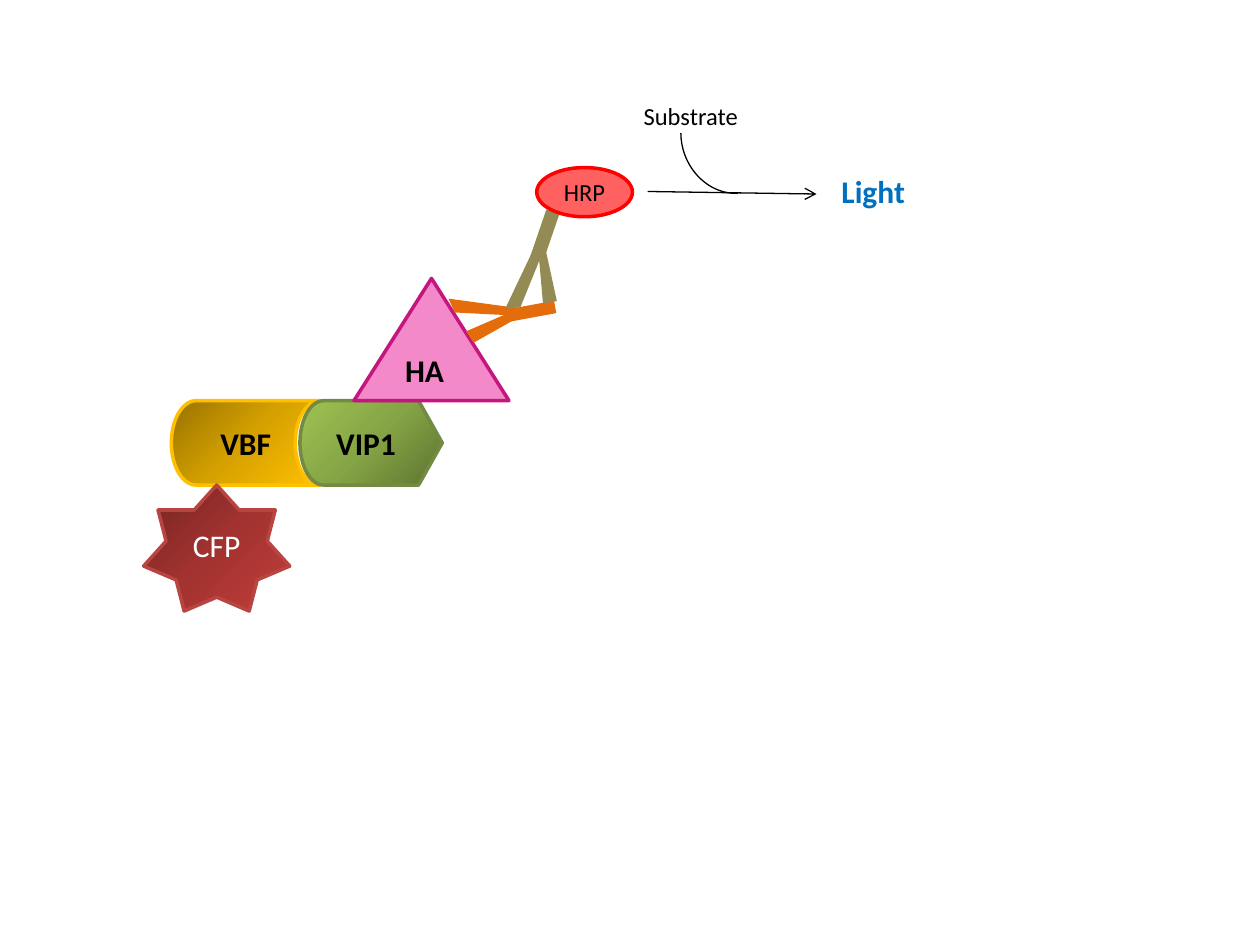
from copy import deepcopy
from dataclasses import dataclass

from lxml import etree
from pptx import Presentation
from pptx.dml.color import RGBColor
from pptx.enum.shapes import MSO_CONNECTOR, MSO_SHAPE
from pptx.enum.text import MSO_ANCHOR, MSO_AUTO_SIZE, PP_ALIGN
from pptx.oxml.ns import qn
from pptx.util import Inches, Pt

STORED_DATA = MSO_SHAPE.FLOWCHART_STORED_DATA
DISPLAY = MSO_SHAPE.FLOWCHART_DISPLAY
EXTRACT = MSO_SHAPE.FLOWCHART_EXTRACT
STAR = MSO_SHAPE.STAR_7_POINT
ARC, OVAL, RECT = MSO_SHAPE.ARC, MSO_SHAPE.OVAL, MSO_SHAPE.RECTANGLE
STRAIGHT = MSO_CONNECTOR.STRAIGHT
MIDDLE = MSO_ANCHOR.MIDDLE
LEFT, CENTER = PP_ALIGN.LEFT, PP_ALIGN.CENTER
GROW = MSO_AUTO_SIZE.SHAPE_TO_FIT_TEXT


@dataclass(frozen=True)
class Theme:
    """Colours, font and sizes of the diagram."""
    font: str = "Calibri"
    large: int = 18
    small: int = 14
    outline: float = 2
    thin: float = 0.75
    black: str = "000000"
    white: str = "FFFFFF"
    light: str = "0070C0"
    vbf: tuple = ("977200", "D7A200", "FFC000")
    vip: tuple = ("5D7330", "85A445", "9EC252")
    vip_line: str = "738A42"
    cfp: tuple = ("722422", "A33330", "C13D39")
    cfp_line: str = "B84542"
    ha: str = "F389C8"
    ha_line: str = "C5157E"
    hrp: str = "FF6161"
    hrp_line: str = "FF0000"
    primary: str = "E46C0A"
    secondary: str = "948A54"


T = Theme()


def rgb(color):
    """Turn a hex string into a colour."""
    return RGBColor.from_string(color)


def paint(sp, fill=None, line=None, width=T.outline):
    """Give a shape its fill, gradient (three colours) and outline."""
    sp.shadow.inherit = False
    if fill is None:
        sp.fill.background()
    elif isinstance(fill, tuple):
        sp.fill.gradient()
        sp.fill.gradient_angle = 315
        stops = next(sp._element.iter(qn("a:gsLst")))
        stops.append(deepcopy(stops[-1]))
        for i, (stop, color) in enumerate(zip(sp.fill.gradient_stops, fill)):
            stop.position = i / 2
            stop.color.rgb = rgb(color)
    else:
        sp.fill.solid()
        sp.fill.fore_color.rgb = rgb(fill)
    if line is None:
        sp.line.fill.background()
    else:
        sp.line.color.rgb = rgb(line)
        sp.line.width = Pt(width)


def write(tf, text, size=T.large, color=T.black, bold=False, align=LEFT):
    """Write one formatted paragraph."""
    p = tf.paragraphs[0]
    p.text = text
    p.alignment = align
    p.font.name = T.font
    p.font.size = Pt(size)
    p.font.bold = bold
    p.font.color.rgb = rgb(color)


def add_shape(shapes, kind, box, fill=None, line=None, width=T.outline, rotation=0):
    """Add a preset shape."""
    sp = shapes.add_shape(kind, *map(Inches, box))
    sp.rotation = rotation
    paint(sp, fill, line, width)
    return sp


def add_node(shapes, kind, box, fill, line, text, **style):
    """Add a shape that carries a label."""
    sp = add_shape(shapes, kind, box, fill, line)
    sp.text_frame.vertical_anchor = MIDDLE
    write(sp.text_frame, text, **style)


def add_label(shapes, box, text, **style):
    """Add a free label that does not wrap."""
    tf = shapes.add_textbox(*map(Inches, box)).text_frame
    tf.word_wrap = False
    tf.auto_size = GROW
    write(tf, text, **style)


def add_antibody(shapes, color, arms, stem, rotation):
    """Add a Y-shaped antibody from its two arms and its stem."""
    points = [(Inches(x), Inches(y)) for x, y in arms]
    builder = shapes.build_freeform(*points[0])
    builder.add_line_segments(points[1:], close=True)
    paint(builder.convert_to_shape(), color)
    add_shape(shapes, RECT, stem, color, rotation=rotation)


def add_arrow(shapes, start, end):
    """Add a thin line with an open arrowhead at its end."""
    cx = shapes.add_connector(STRAIGHT, *map(Inches, start + end))
    cx.line.color.rgb = rgb(T.black)
    cx.line.width = Pt(T.thin)
    etree.SubElement(cx.line._get_or_add_ln(), qn("a:tailEnd"), type="arrow")
    etree.SubElement(cx._element.spPr, qn("a:effectLst"))


def add_fusion_protein(shapes):
    """Draw the VBF, VIP1, CFP and HA parts."""
    add_node(shapes, STORED_DATA, (1.36, 3.18, 1.18, 0.67), T.vbf, T.vbf[-1],
             "VBF", bold=True, align=CENTER)
    vip = shapes.add_group_shape().shapes
    add_shape(vip, DISPLAY, (2.38, 3.18, 1.13, 0.67), T.vip, T.vip_line, rotation=180)
    add_label(vip, (2.57, 3.32, 0.68, 0.4), "VIP1", bold=True)
    add_node(shapes, STAR, (1.14, 3.85, 1.16, 1), T.cfp, T.cfp_line,
             "CFP", color=T.white, align=CENTER)
    add_node(shapes, EXTRACT, (2.81, 2.21, 1.23, 0.97), T.ha, T.ha_line,
             "HA", bold=True)


def add_detection(shapes):
    """Draw the antibodies, the enzyme and its light reaction."""
    arc = add_shape(shapes, ARC, (5.41, 0.64, 0.79, 0.9), line=T.black,
                    width=T.thin, rotation=160.4)
    arc.adjustments[0], arc.adjustments[1] = 169.78, 14.6
    add_antibody(shapes, T.primary,
                 [(4.22, 2.46), (3.76, 2.72), (3.7, 2.63), (4, 2.5),
                  (3.61, 2.48), (3.56, 2.37)],
                 (4.04, 2.42, 0.37, 0.1), 349.6)
    add_antibody(shapes, T.secondary,
                 [(4.3, 1.84), (4.42, 2.39), (4.31, 2.41), (4.28, 2.07),
                  (4.13, 2.44), (4.01, 2.45)],
                 (4.13, 1.81, 0.39, 0.11), 288.9)
    add_node(shapes, OVAL, (4.26, 1.33, 0.76, 0.39), T.hrp, T.hrp_line,
             "HRP", size=T.small, align=CENTER)
    add_label(shapes, (5.01, 0.75, 0.96, 0.34), "Substrate", size=T.small)
    add_arrow(shapes, (5.14, 1.52), (6.48, 1.54))
    add_label(shapes, (6.58, 1.32, 0.71, 0.4), "Light", color=T.light, bold=True)


def main():
    """Build and save the slide."""
    prs = Presentation()
    prs.slide_width, prs.slide_height = Inches(10), Inches(7.5)
    s = prs.slides.add_slide(prs.slide_layouts[6])
    add_fusion_protein(s.shapes)
    add_detection(s.shapes.add_group_shape().shapes)
    prs.save("out.pptx")


if __name__ == "__main__":
    main()
